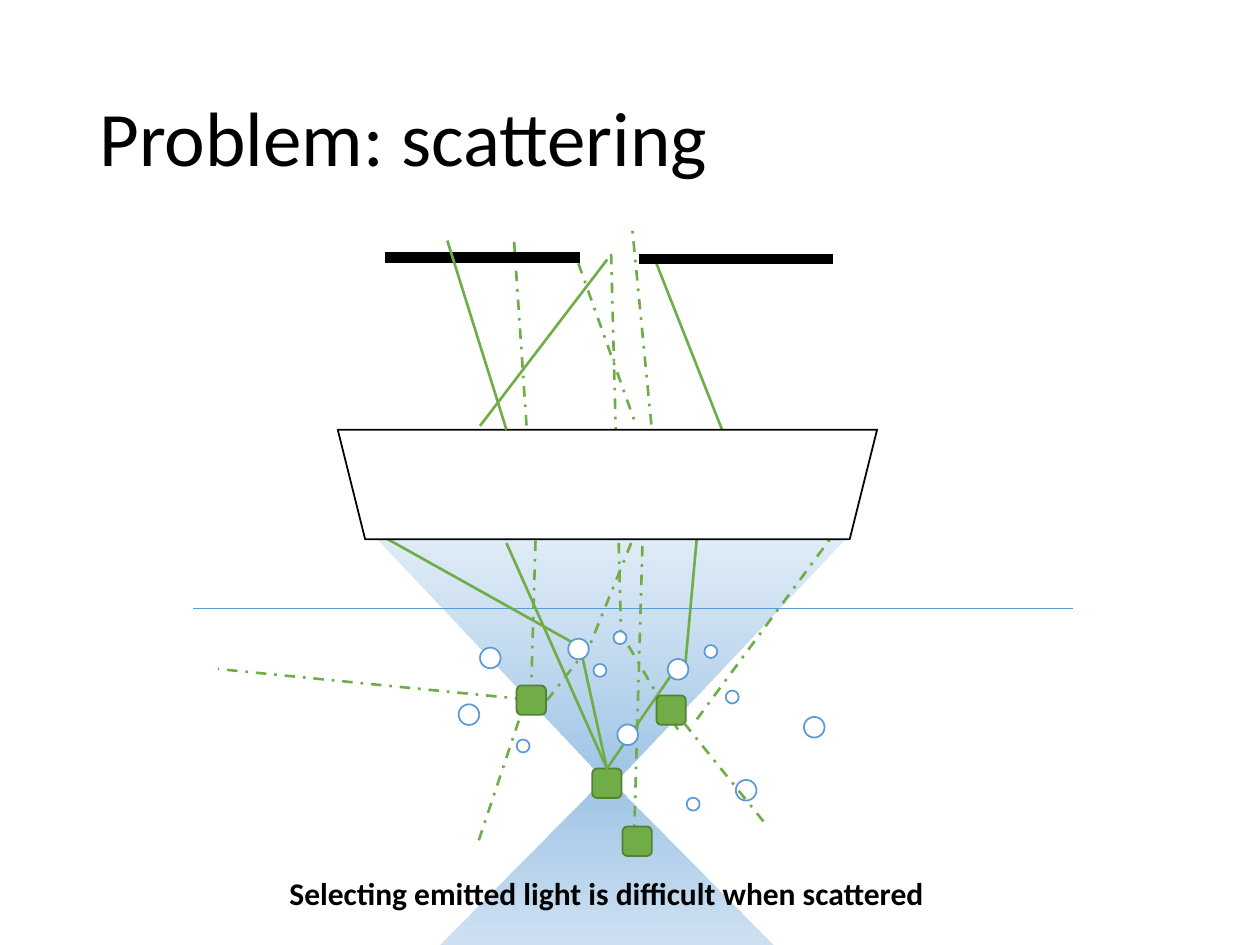
from dataclasses import dataclass

from lxml import etree
from pptx import Presentation
from pptx.dml.color import RGBColor
from pptx.enum.dml import MSO_LINE
from pptx.enum.shapes import MSO_CONNECTOR, MSO_SHAPE
from pptx.enum.text import MSO_ANCHOR, MSO_AUTO_SIZE, PP_ALIGN
from pptx.oxml.ns import qn
from pptx.util import Pt

STRAIGHT = MSO_CONNECTOR.STRAIGHT
DASH_DOT = MSO_LINE.DASH_DOT
TRIANGLE, TRAPEZOID = MSO_SHAPE.ISOSCELES_TRIANGLE, MSO_SHAPE.TRAPEZOID
OVAL, ROUNDED = MSO_SHAPE.OVAL, MSO_SHAPE.ROUNDED_RECTANGLE
MIDDLE = MSO_ANCHOR.MIDDLE
LEFT, CENTER = PP_ALIGN.LEFT, PP_ALIGN.CENTER
FIT_SHAPE, NO_FIT = MSO_AUTO_SIZE.SHAPE_TO_FIT_TEXT, MSO_AUTO_SIZE.NONE
TOP = 0

COLORS = {
    "black": "000000", "white": "FFFFFF", "water": "5B9BD5",
    "light": "70AD47", "block_edge": "538035",
    "beam_focus": "9EC4E6", "beam_edge": "DDEAF7",
}
TITLE_FORMAT = {"size": Pt(44), "name": "Calibri", "bold": False}
CAPTION_FORMAT = {"size": Pt(18), "name": "Calibri", "bold": True}
BLOCK_SIZE, BIG, SMALL = 16.8, 11.8, 7.4


@dataclass
class Box:
    x: float
    y: float
    w: float
    h: float
    rotation: float = 0


@dataclass
class Line:
    x1: float
    y1: float
    x2: float
    y2: float
    color: str = "light"
    width: float = 1.5
    dashed: bool = False


UPPER_BEAM = Box(214.6, 307.4, 269.3, 141.8, 180)
LOWER_BEAM = Box(212.4, 443.5, 268.6, 135.4)
LENS = Box(193, 245.5, 308.2, 62.6, 180)
SURFACE = Line(110.2, 347.8, 613.4, 347.8, "water", 1)
APERTURE = [Line(365, 148, 475.9, 148, "black", 6),
            Line(220.3, 147.2, 331.2, 147.2, "black", 6)]

FOCUS = (338.4, 439.2)
SCATTERING_BLOCK = (295.2, 391.7)
OTHER_BLOCKS = [(375.1, 397.4), (355.7, 472.3)]
BUBBLES = {
    BIG: [(459.4, 409.7), (381.6, 376.6), (262.1, 402.5), (274.3, 370.1),
          (420.5, 445.7), (352.8, 414), (324.7, 365)],
    SMALL: [(339.1, 379.4), (402.5, 368.6), (414.7, 394.6), (295.2, 422.6),
            (392.4, 455.8), (350.6, 360.7)],
}

FOCUS_RAY_ENDS = [(289.4, 310.3), (383, 386.6), (330.5, 365)]
DIRECT_RAYS = [
    (274.3, 243.4, 347, 148.3), (412.6, 245.5, 375.1, 150.5),
    (331.2, 369.4, 220.3, 307.4), (391.7, 378.7, 398.2, 307.4),
]
SCATTERED_RAYS = [
    (398.2, 411.1, 483.8, 295.2), (387.4, 416.9, 354.2, 360.7),
    (300.2, 399.6, 124.6, 382.3), (312.5, 400.3, 330.5, 377.3),
    (372.2, 242.6, 361.4, 131.8), (273.6, 480.2, 301, 398.2),
    (293.8, 138.2, 301, 244.8), (355, 365.8, 349.2, 144.7),
    (360.7, 310.3, 336.2, 370.8), (362.2, 483.1, 367.2, 308.2),
    (330.5, 150.5, 363.6, 243.4),
]
RAY_TO_BLOCK = Line(306, 308.9, 303.6, 391.7, dashed=True)
RAY_PAST_BLOCK = Line(436.3, 469.4, 388.1, 409.7, dashed=True)
RAY_OVER_APERTURE = Line(289.4, 245.5, 255.6, 137.5)


def rgb(name: str) -> RGBColor:
    return RGBColor.from_string(COLORS[name])


def add_shape(s, kind, box: Box, fill: str, edge: str):
    sp = s.shapes.add_shape(kind, Pt(box.x), Pt(box.y), Pt(box.w), Pt(box.h))
    sp.rotation = box.rotation
    sp.shadow.inherit = False
    sp.fill.solid()
    sp.fill.fore_color.rgb = rgb(fill)
    sp.line.color.rgb = rgb(edge)
    sp.line.width = Pt(1)
    return sp


def add_block(s, x: float, y: float):
    return add_shape(s, ROUNDED, Box(x, y, BLOCK_SIZE, BLOCK_SIZE),
                     "light", "block_edge")


def add_beam(s, box: Box) -> None:
    """Draw a cone of light that fades from its tip to its base."""
    sp = add_shape(s, TRIANGLE, box, "beam_focus", "beam_focus")
    sp.line.fill.background()
    sp.fill.gradient()
    sp.fill.gradient_angle = 270
    stops = sp.fill.gradient_stops
    for stop, position, name in zip(stops, (0, 1), ("beam_focus", "beam_edge")):
        stop.position = position
        stop.color.rgb = rgb(name)
    base = list(sp._element.spPr.iter(qn("a:srgbClr")))[-1]
    etree.SubElement(base, qn("a:alpha"), val="90000")


def add_line(s, line: Line):
    c = s.shapes.add_connector(STRAIGHT, Pt(line.x1), Pt(line.y1),
                               Pt(line.x2), Pt(line.y2))
    c.line.color.rgb = rgb(line.color)
    c.line.width = Pt(line.width)
    if line.dashed:
        c.line.dash_style = DASH_DOT
    etree.SubElement(c._element.spPr, qn("a:effectLst"))
    return c


def set_text(tf, text: str, font: dict, align):
    tf.word_wrap = True
    p = tf.paragraphs[0]
    p.alignment = align
    r = p.add_run()
    r.text = text
    for name, value in font.items():
        setattr(r.font, name, value)
    r.font.color.rgb = rgb("black")
    return p


def add_title(s, text: str) -> None:
    sp = s.shapes.title
    place = {"left": 49.7, "top": 28.8, "width": 620.6, "height": 104.4}
    for name, value in place.items():
        setattr(sp, name, Pt(value))
    tf = sp.text_frame
    tf.vertical_anchor = MIDDLE
    tf.auto_size = NO_FIT
    set_text(tf, text, TITLE_FORMAT, LEFT).line_spacing = 0.9


def add_caption(s, text: str) -> None:
    tf = s.shapes.add_textbox(Pt(146.9), Pt(496.1), Pt(399.6), Pt(29)).text_frame
    set_text(tf, text, CAPTION_FORMAT, CENTER)
    tf.auto_size = FIT_SHAPE


def main() -> None:
    prs = Presentation()
    prs.slide_width, prs.slide_height = Pt(720), Pt(540)
    s = prs.slides.add_slide(prs.slide_layouts[5])

    for beam in (UPPER_BEAM, LOWER_BEAM):
        add_beam(s, beam)
    add_title(s, "Problem: scattering")
    add_line(s, SURFACE)

    focus = add_block(s, *FOCUS)
    for end in FOCUS_RAY_ENDS:
        add_line(s, Line(*FOCUS, *end)).begin_connect(focus, TOP)
    for ray in DIRECT_RAYS:
        add_line(s, Line(*ray))
    for ray in SCATTERED_RAYS:
        add_line(s, Line(*ray, dashed=True))
    for size, places in BUBBLES.items():
        for x, y in places:
            add_shape(s, OVAL, Box(x, y, size, size), "white", "water")

    add_shape(s, TRAPEZOID, LENS, "white", "black")
    for place in OTHER_BLOCKS:
        add_block(s, *place)
    block = add_block(s, *SCATTERING_BLOCK)
    add_line(s, RAY_TO_BLOCK).end_connect(block, TOP)
    for line in (RAY_PAST_BLOCK, *APERTURE, RAY_OVER_APERTURE):
        add_line(s, line)
    add_caption(s, "Selecting emitted light is difficult when scattered")

    prs.save("out.pptx")


if __name__ == "__main__":
    main()
